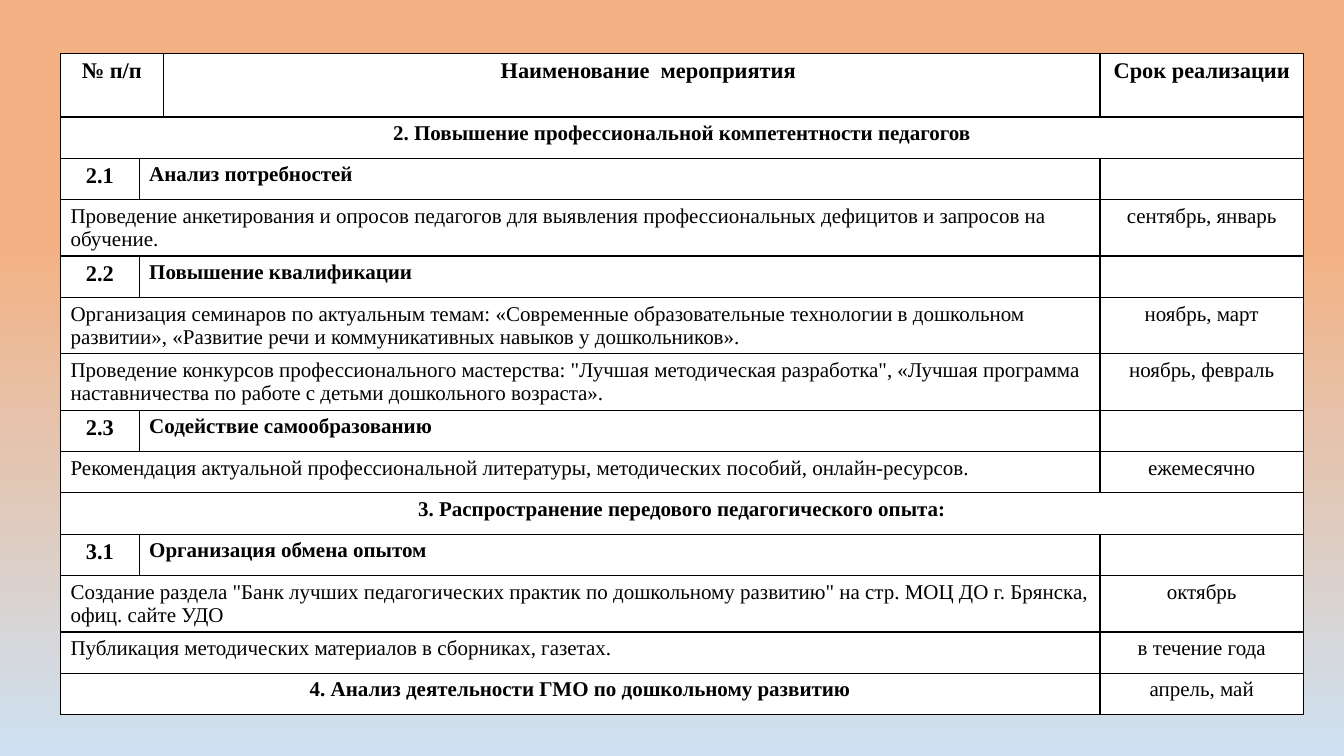
"""Builds a slide with a work plan table for teachers' professional growth."""
import copy
from dataclasses import dataclass

import lxml.etree
import pptx
import pptx.dml.color
import pptx.enum.text
import pptx.oxml.ns
import pptx.util

Inches = pptx.util.Inches
Rgb = pptx.dml.color.RGBColor.from_string
Align = pptx.enum.text.PP_ALIGN
qn = pptx.oxml.ns.qn


@dataclass(frozen=True)
class Theme:
    font: str = "Times New Roman"
    ink: str = "000000"
    paper: str = "FFFFFF"
    glow: tuple = ((0.32, "F4B183"), (0.6, "E4C5B1"), (1, "CEE1F2"))
    large: int = 16
    body: int = 15
    line: int = 1


@dataclass(frozen=True)
class Part:
    first: int
    last: int
    size: int
    bold: bool = False
    mid: bool = True
    inset: float = 0.1


THEME = Theme()
DATE = Part(3, 3, THEME.body)
KINDS = {
    "head": (Part(0, 1, THEME.large, True), Part(2, 2, THEME.large, True, inset=0.43),
             Part(3, 3, THEME.large, True)),
    "band": (Part(0, 3, THEME.body, True),),
    "topic": (Part(0, 0, THEME.large, True), Part(1, 2, THEME.body, True, False), DATE),
    "task": (Part(0, 2, THEME.body, mid=False), DATE),
    "total": (Part(0, 2, THEME.body, True), DATE),
}
COLS = (0.78, 0.23, 9.29, 2.02)
HEAD, ROW = 0.63, 0.41
PLAN = (
    ("head", "№ п/п", "Наименование  мероприятия", "Срок реализации"),
    ("band", "2. Повышение профессиональной компетентности педагогов"),
    ("topic", "2.1", "Анализ потребностей", ""),
    ("task", "Проведение анкетирования и опросов педагогов для выявления "
     "профессиональных дефицитов и запросов на обучение.", "сентябрь, январь"),
    ("topic", "2.2", "Повышение квалификации", ""),
    ("task", "Организация семинаров по актуальным темам: «Современные образовательные "
     "технологии в дошкольном развитии», «Развитие речи и коммуникативных навыков "
     "у дошкольников».", "ноябрь, март"),
    ("task", "Проведение конкурсов профессионального мастерства: \"Лучшая методическая "
     "разработка\", «Лучшая программа наставничества по работе с детьми дошкольного "
     "возраста».", "ноябрь, февраль"),
    ("topic", "2.3", "Содействие самообразованию", ""),
    ("task", "Рекомендация актуальной профессиональной литературы, методических пособий, "
     "онлайн-ресурсов.", "ежемесячно"),
    ("band", "3. Распространение передового педагогического опыта:"),
    ("topic", "3.1", "Организация обмена опытом", ""),
    ("task", "Создание раздела \"Банк лучших педагогических практик по дошкольному "
     "развитию\" на стр. МОЦ ДО г. Брянска, офиц. сайте УДО", "октябрь"),
    ("task", "Публикация методических материалов в сборниках, газетах.", "в течение года"),
    ("total", "4. Анализ деятельности ГМО по дошкольному развитию", "апрель, май"),
)


class Maker:
    def __init__(self, slide, theme):
        self.slide, self.theme = slide, theme

    def back(self):
        fill = self.slide.background.fill
        fill.gradient()
        fill.gradient_angle = 270
        stops = next(self.slide.element.iter(qn("a:gsLst")))
        stops.append(copy.deepcopy(stops[0]))
        for stop, (place, color) in zip(fill.gradient_stops, self.theme.glow):
            stop.position = place
            stop.color.rgb = Rgb(color)

    def frame(self, cell):
        cell.fill.solid()
        cell.fill.fore_color.rgb = Rgb(self.theme.paper)
        props = cell._tc.get_or_add_tcPr()
        for spot, side in enumerate(("a:lnL", "a:lnR", "a:lnT", "a:lnB")):
            line = lxml.etree.Element(qn(side), w=str(pptx.util.Pt(self.theme.line)))
            fill = lxml.etree.SubElement(line, qn("a:solidFill"))
            lxml.etree.SubElement(fill, qn("a:srgbClr"), val=self.theme.ink)
            props.insert(spot, line)

    def text(self, cell, words, part):
        cell.margin_left = Inches(part.inset)
        para = cell.text_frame.paragraphs[0]
        para.text = words
        para.alignment = Align.CENTER if part.mid else Align.LEFT
        for run in para.runs:
            run.font.name = self.theme.font
            run.font.size = pptx.util.Pt(part.size)
            run.font.bold = part.bold
            run.font.color.rgb = Rgb(self.theme.ink)

    def table(self, left, top, plan):
        high = HEAD + ROW * (len(plan) - 1)
        table = self.slide.shapes.add_table(
            len(plan), len(COLS), Inches(left), Inches(top),
            Inches(sum(COLS)), Inches(high)).table
        for col, width in zip(table.columns, COLS):
            col.width = Inches(width)
        for cell in table.iter_cells():
            self.frame(cell)
        for num, (kind, *texts) in enumerate(plan):
            table.rows[num].height = Inches(HEAD if kind == "head" else ROW)
            for words, part in zip(texts, KINDS[kind]):
                cell = table.cell(num, part.first)
                if part.last > part.first:
                    cell.merge(table.cell(num, part.last))
                self.text(cell, words, part)


def main():
    deck = pptx.Presentation()
    deck.slide_width, deck.slide_height = Inches(13.33), Inches(7.5)
    maker = Maker(deck.slides.add_slide(deck.slide_layouts[6]), THEME)
    maker.back()
    maker.table(0.6, 0.53, PLAN)
    deck.save("out.pptx")


if __name__ == "__main__":
    main()
